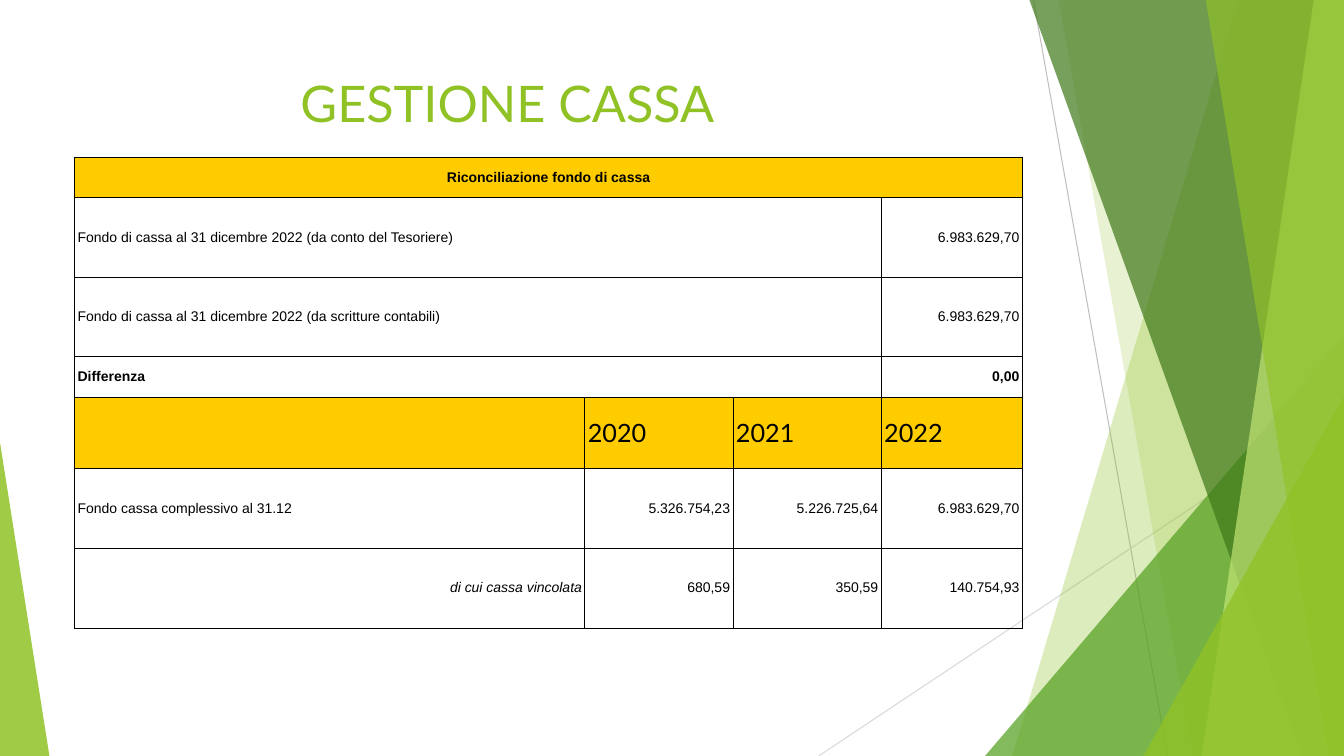
from lxml import etree
from pptx import Presentation
from pptx.dml import color
from pptx.enum import shapes, text
from pptx.oxml import ns
from pptx.util import Inches, Pt

GREEN, GOLD, BLACK = "90C226", "FFCC00", "000000"
LEFT, CENTER, RIGHT = text.PP_ALIGN.LEFT, text.PP_ALIGN.CENTER, text.PP_ALIGN.RIGHT


def rgb(value):
    return color.RGBColor.from_string(value)


def add_child(parent, tag, **attributes):
    return etree.SubElement(parent, ns.qn(tag), attributes)


def apply(target, values):
    for name, value in values.items():
        setattr(target, name, value)


class Slide:
    body = {"name": "Arial", "size": Pt(10), "bold": False, "italic": False}
    year = {**body, "name": "Lato", "size": Pt(18)}
    title = {**year, "size": Pt(36)}

    def __init__(self, deck):
        self.page = deck.slides.add_slide(deck.slide_layouts[6])

    def line(self, start, end, tint):
        ends = [Inches(length) for length in start + end]
        line = self.page.shapes.add_connector(shapes.MSO_CONNECTOR.STRAIGHT, *ends)
        line.line.color.rgb = rgb(tint)
        line.line.width = Pt(0.75)
        add_child(line._element.spPr, "a:effectLst")

    def paint(self, shape, tint, opacity):
        shape.shadow.inherit = False
        shape.fill.solid()
        shape.fill.fore_color.rgb = rgb(tint)
        shape.line.fill.background()
        fill = shape._element.spPr.find(ns.qn("a:solidFill"))
        add_child(fill[0], "a:alpha", val=str(opacity * 1000))

    def band(self, top_left, bottom_left, tint, opacity):
        corners = [(top_left, 0), (13.33, 0), (13.33, 7.5), (bottom_left, 7.5)]
        points = [(Inches(x), Inches(y)) for x, y in corners]
        builder = self.page.shapes.build_freeform(*points[0])
        builder.add_line_segments(points[1:], close=True)
        self.paint(builder.convert_to_shape(), tint, opacity)

    def triangle(self, place, apex, tint, opacity):
        lengths = [Inches(length) for length in place]
        shape = self.page.shapes.add_shape(shapes.MSO_SHAPE.ISOSCELES_TRIANGLE, *lengths)
        shape.adjustments[0] = apex
        self.paint(shape, tint, opacity)

    def add_words(self, frame, words, style, tint, align=LEFT):
        para = frame.paragraphs[0]
        para.alignment = align
        span = para.add_run()
        span.text = words
        apply(span.font, style)
        span.font.color.rgb = rgb(tint)

    def heading(self, words, place, indent):
        box = self.page.shapes.add_textbox(*[Inches(length) for length in place])
        apply(box.text_frame, {"word_wrap": True, "margin_left": Inches(indent),
                               "vertical_anchor": text.MSO_ANCHOR.TOP})
        self.add_words(box.text_frame, words, self.title, GREEN)

    def border(self, cell):
        properties = cell._tc.get_or_add_tcPr()
        for side in "LRTB":
            edge = add_child(properties, f"a:ln{side}", w=str(Pt(0.6)))
            add_child(add_child(edge, "a:solidFill"), "a:srgbClr", val=BLACK)

    def table(self, left, top, widths, heights, rows):
        table = self.page.shapes.add_table(
            len(heights), len(widths), Inches(left), Inches(top),
            Inches(sum(widths)), Inches(sum(heights))).table
        apply(table, {"first_row": False, "horz_banding": False})
        for column, width in zip(table.columns, widths):
            column.width = Inches(width)
        for row, height in zip(table.rows, heights):
            row.height = Inches(height)
        for cell in table.iter_cells():
            self.border(cell)
        for row, (fill, entries) in enumerate(rows):
            column = 0
            for words, reach, align, style in entries:
                cell = table.cell(row, column)
                if reach > 1:
                    cell.merge(table.cell(row, column + reach - 1))
                self.fill_cell(cell, fill)
                if words:
                    self.add_words(cell.text_frame, words, style, BLACK, align)
                column += reach

    def fill_cell(self, cell, fill):
        apply(cell, {"margin_left": Inches(0.03), "margin_right": Inches(0.03),
                     "margin_top": 0, "margin_bottom": 0,
                     "vertical_anchor": text.MSO_ANCHOR.MIDDLE})
        if fill:
            cell.fill.solid()
            cell.fill.fore_color.rgb = rgb(fill)
        else:
            cell.fill.background()


def main():
    deck = Presentation()
    apply(deck, {"slide_width": Inches(13.33), "slide_height": Inches(7.5)})
    slide = Slide(deck)

    slide.line((10.25, 0), (11.58, 7.5), "BFBFBF")
    slide.line((13.33, 4.03), (8.12, 7.5), "D9D9D9")
    slide.band(12.28, 10.04, GREEN, 30)
    slide.band(10.5, 11.83, GREEN, 20)
    slide.triangle((9.77, 3.33, 3.56, 4.17), 1, "54A021", 72)
    slide.band(10.21, 12.91, "3F7819", 70)
    slide.band(13.03, 11.92, "C0E474", 70)
    slide.band(11.96, 13.18, GREEN, 65)
    slide.triangle((11.34, 3.93, 1.99, 3.57), 1, GREEN, 80)
    slide.triangle((0, 4.39, 0.49, 3.11), 0, GREEN, 85)

    slide.heading("GESTIONE CASSA", (0.74, 0.67, 9.4, 0.78), 2.24)

    body, year = Slide.body, Slide.year
    bold, italic = {**body, "bold": True}, {**body, "italic": True}

    def balance(label, amount, style=body):
        return None, [(label, 3, LEFT, style), (amount, 1, RIGHT, style)]

    def history(label, amounts, align=LEFT, style=body):
        return None, [(label, 1, align, style)] + [(amount, 1, RIGHT, body) for amount in amounts]

    rows = [
        (GOLD, [("Riconciliazione fondo di cassa", 4, CENTER, bold)]),
        balance("Fondo di cassa al 31 dicembre 2022 (da conto del Tesoriere)", "6.983.629,70"),
        balance("Fondo di cassa al 31 dicembre 2022 (da scritture contabili)", "6.983.629,70"),
        balance("Differenza", "0,00", bold),
        (GOLD, [(words, 1, LEFT, year) for words in ("", "2020", "2021", "2022")]),
        history("Fondo cassa complessivo al 31.12",
                ("5.326.754,23", "5.226.725,64", "6.983.629,70")),
        history("di cui cassa vincolata", ("680,59", "350,59", "140.754,93"), RIGHT, italic),
    ]
    slide.table(0.74, 1.56, (5.06, 1.47, 1.47, 1.4),
                (0.4, 0.79, 0.79, 0.4, 0.71, 0.79, 0.79), rows)
    deck.save("out.pptx")


if __name__ == "__main__":
    main()
